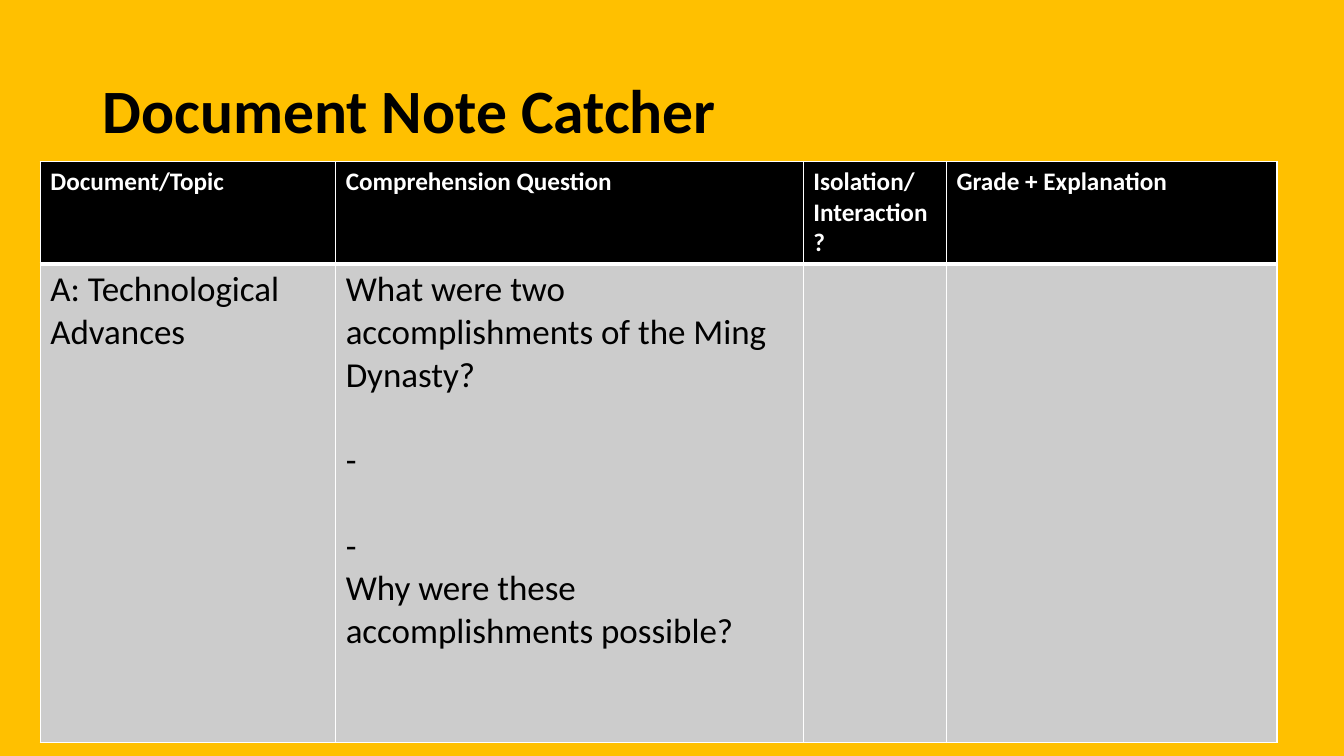
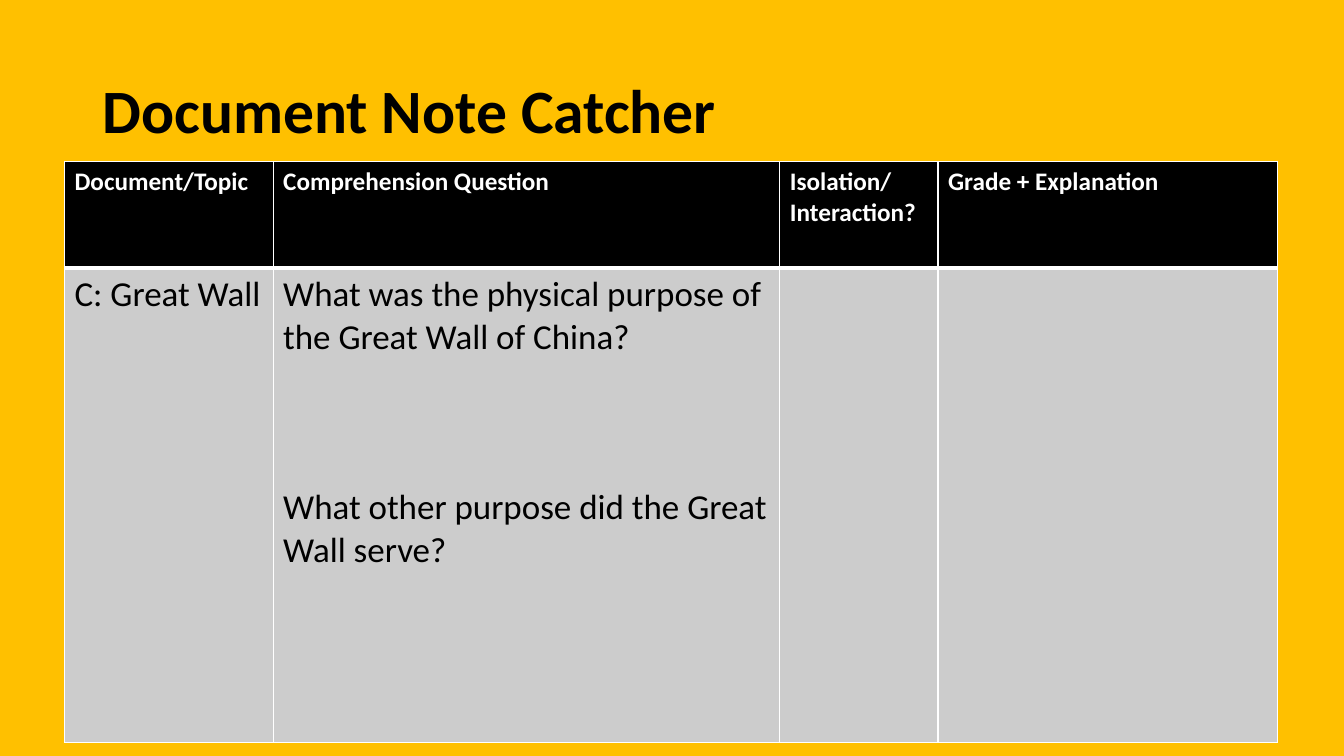
from lxml.etree import SubElement
from pptx import Presentation
from pptx.dml.color import RGBColor
from pptx.enum.text import MSO_ANCHOR, PP_ALIGN
from pptx.oxml.ns import qn
from pptx.util import Pt

GOLD = RGBColor(0xFF, 0xC0, 0x00)
BLACK = RGBColor(0x00, 0x00, 0x00)
WHITE = RGBColor(0xFF, 0xFF, 0xFF)
GRAY = RGBColor(0xCC, 0xCC, 0xCC)
FONT = "Calibri"
BODY_SIZE = 25
BODY_LINE = 30.5
TABLE_TOP = 115.2

NOTE_CATCHERS = [
    {
        "left": 28.8,
        "columns": [211, 334, 102.3, 236.2],
        "rows": [73, 342],
        "heading": "Isolation/Interaction?",
        "topic": "A: Technological Advances",
        # Each question line with the number of writing lines left above it
        "questions": [
            ("What were two accomplishments of the Ming Dynasty?", 0),
            ("-", 1),
            ("-", 1),
            ("Why were these accomplishments possible?", 0),
        ],
    },
    {
        "left": 46.1,
        "columns": [149, 362, 113, 242.6],
        "rows": [76.3, 339],
        "heading": "Isolation/ Interaction?",
        "topic": "C: Great Wall",
        "questions": [
            ("What was the physical purpose of the Great Wall of China?", 0),
            ("What other purpose did the Great Wall serve?", 3),
        ],
    },
]


def write(paragraph, text, size=BODY_SIZE, color=BLACK, bold=False, before=0, spacing=1.0):
    run = paragraph.add_run()
    run.text = text
    run.font.name = FONT
    run.font.size = Pt(size)
    run.font.bold = bold
    run.font.color.rgb = color
    paragraph.alignment = PP_ALIGN.LEFT
    paragraph.space_before = Pt(before)
    paragraph.line_spacing = spacing


def style_cell(cell, fill, top, bottom):
    """Fill the cell and give it white borders; top and bottom are widths in points."""
    properties = cell._tc.get_or_add_tcPr()
    for tag, width in (("a:lnL", 1), ("a:lnR", 1), ("a:lnT", top), ("a:lnB", bottom)):
        line = SubElement(properties, qn(tag), w=str(Pt(width)))
        solid = SubElement(line, qn("a:solidFill"))
        SubElement(solid, qn("a:srgbClr"), val=str(WHITE))
    cell.fill.solid()
    cell.fill.fore_color.rgb = fill


presentation = Presentation()
presentation.slide_width = Pt(960)
presentation.slide_height = Pt(540)
background = presentation.slide_master.background.fill
background.solid()
background.fore_color.rgb = GOLD

for catcher in NOTE_CATCHERS:
    slide = presentation.slides.add_slide(presentation.slide_layouts[5])

    title = slide.shapes.title
    title.left, title.top, title.width, title.height = Pt(66), Pt(28.8), Pt(828), Pt(104.4)
    title.text_frame.vertical_anchor = MSO_ANCHOR.MIDDLE
    write(title.text_frame.paragraphs[0], "Document Note Catcher", size=44, bold=True, spacing=0.9)

    columns, rows = catcher["columns"], catcher["rows"]
    table = slide.shapes.add_table(
        len(rows), len(columns), Pt(catcher["left"]), Pt(TABLE_TOP), Pt(sum(columns)), Pt(sum(rows))
    ).table
    for column, width in zip(table.columns, columns):
        column.width = Pt(width)
    for row, height in zip(table.rows, rows):
        row.height = Pt(height)

    headings = ["Document/Topic", "Comprehension Question", catcher["heading"], "Grade + Explanation"]
    for index, heading in enumerate(headings):
        header = table.cell(0, index)
        style_cell(header, BLACK, top=1, bottom=3)
        write(header.text_frame.paragraphs[0], heading, size=18, color=WHITE, bold=True)
        style_cell(table.cell(1, index), GRAY, top=3, bottom=1)

    write(table.cell(1, 0).text_frame.paragraphs[0], catcher["topic"])
    question_frame = table.cell(1, 1).text_frame
    for index, (question, blank_lines) in enumerate(catcher["questions"]):
        paragraph = question_frame.add_paragraph() if index else question_frame.paragraphs[0]
        write(paragraph, question, before=blank_lines * BODY_LINE)

presentation.save("out.pptx")
